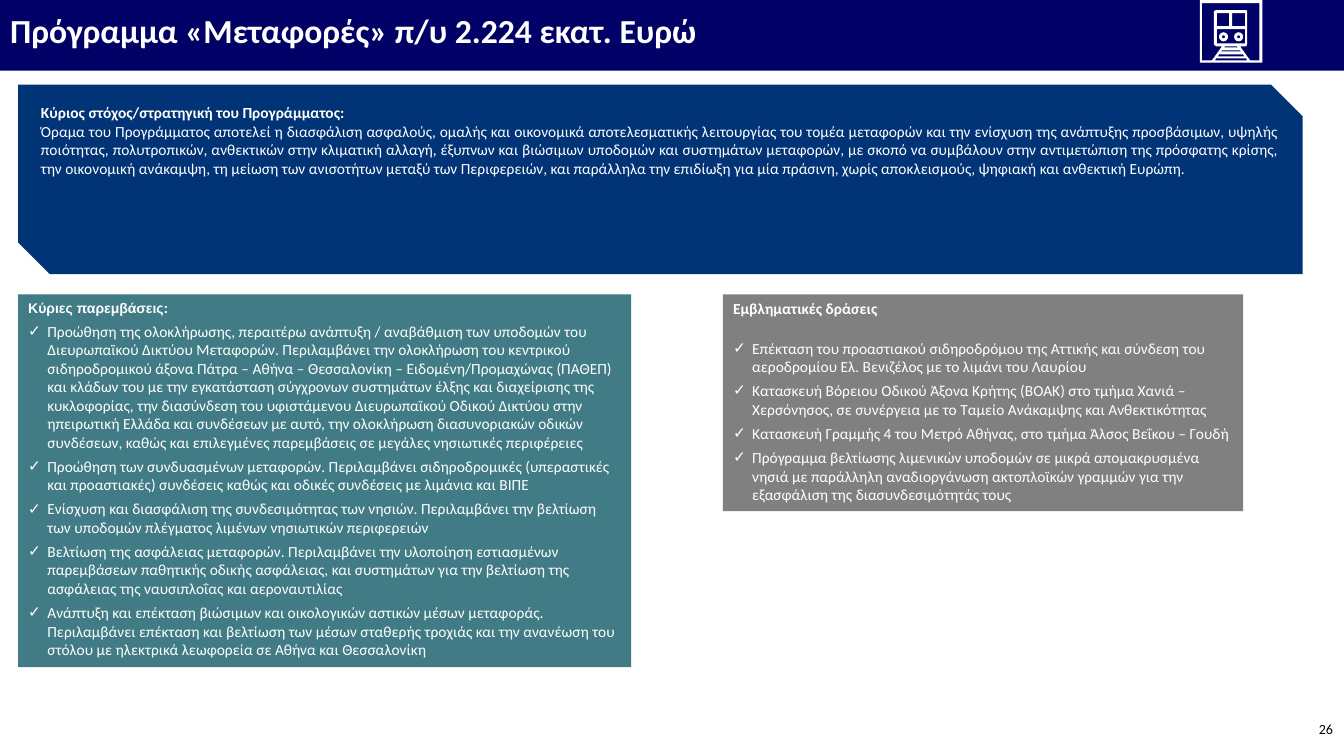
from pptx import Presentation as Deck
from pptx.dml.color import RGBColor as Rgb
from pptx.enum.shapes import MSO_SHAPE as Kind
from pptx.enum.text import MSO_ANCHOR as Anchor, MSO_AUTO_SIZE as Fit, PP_ALIGN as Align
from pptx.oxml import parse_xml
from pptx.oxml.ns import nsdecls
from pptx.util import Inches, Pt

WIDE, HIGH = Inches(13.33), Inches(7.5)
WHITE, BLACK = "FFFFFF", "000000"
BASE = {"name": "Calibri", "size": Pt(11), "bold": False}
BOLD = {"bold": True}
SMALL = {"name": "Arial", "size": Pt(10), "bold": True}
NONE = {"space_before": Pt(0), "space_after": Pt(0), "line_spacing": 1.0, "alignment": Align.LEFT}
TIGHT = {"space_before": Pt(2), "space_after": Pt(2)}
EDGE = {"margin_left": Inches(0.1), "margin_right": Inches(0.1),
        "margin_top": Inches(0.05), "margin_bottom": Inches(0.05)}
EVEN = {"margin_top": Inches(0.1), "margin_bottom": Inches(0.1)}
THIN = {"margin_left": Inches(0.07), "margin_right": Inches(0.07),
        "margin_top": Inches(0.03), "margin_bottom": Inches(0.03)}

TITLE = "Πρόγραμμα «Μεταφορές» π/υ 2.224 εκατ. Ευρώ"
GOAL = "Κύριος στόχος/στρατηγική του Προγράμματος:"
VISION = (
    "Όραμα του Προγράμματος αποτελεί η διασφάλιση ασφαλούς, ομαλής και οικονομικά αποτελεσματικής "
    "λειτουργίας του τομέα μεταφορών και την ενίσχυση της ανάπτυξης προσβάσιμων, υψηλής ποιότητας, "
    "πολυτροπικών, ανθεκτικών στην κλιματική αλλαγή, έξυπνων και βιώσιμων υποδομών και συστημάτων "
    "μεταφορών, με σκοπό να συμβάλουν στην αντιμετώπιση της πρόσφατης κρίσης, την οικονομική ανάκαμψη, "
    "τη μείωση των ανισοτήτων μεταξύ των Περιφερειών, και παράλληλα την επιδίωξη για μία πράσινη, "
    "χωρίς αποκλεισμούς, ψηφιακή και ανθεκτική Ευρώπη.")
WORKS = [
    "Προώθηση της ολοκλήρωσης, περαιτέρω ανάπτυξη / αναβάθμιση των υποδομών του Διευρωπαϊκού Δικτύου "
    "Μεταφορών. Περιλαμβάνει την ολοκλήρωση του κεντρικού σιδηροδρομικού άξονα Πάτρα – Αθήνα – "
    "Θεσσαλονίκη – Ειδομένη/Προμαχώνας (ΠΑΘΕΠ) και κλάδων του με την εγκατάσταση σύγχρονων συστημάτων "
    "έλξης και διαχείρισης της κυκλοφορίας, την διασύνδεση του υφιστάμενου Διευρωπαϊκού Οδικού Δικτύου "
    "στην ηπειρωτική Ελλάδα και συνδέσεων με αυτό, την ολοκλήρωση διασυνοριακών οδικών συνδέσεων, "
    "καθώς και επιλεγμένες παρεμβάσεις σε μεγάλες νησιωτικές περιφέρειες",
    "Προώθηση των συνδυασμένων μεταφορών. Περιλαμβάνει σιδηροδρομικές (υπεραστικές και προαστιακές) "
    "συνδέσεις καθώς και οδικές συνδέσεις με λιμάνια και ΒΙΠΕ",
    "Ενίσχυση και διασφάλιση της συνδεσιμότητας των νησιών. Περιλαμβάνει την βελτίωση των υποδομών "
    "πλέγματος λιμένων νησιωτικών περιφερειών",
    "Βελτίωση της ασφάλειας μεταφορών. Περιλαμβάνει την υλοποίηση εστιασμένων παρεμβάσεων παθητικής "
    "οδικής ασφάλειας, και συστημάτων για την βελτίωση της ασφάλειας της ναυσιπλοΐας και αεροναυτιλίας",
    "Ανάπτυξη και επέκταση βιώσιμων και οικολογικών αστικών μέσων μεταφοράς. Περιλαμβάνει επέκταση και "
    "βελτίωση των μέσων σταθερής τροχιάς και την ανανέωση του στόλου με ηλεκτρικά λεωφορεία σε Αθήνα "
    "και Θεσσαλονίκη"]
FLAGS = [
    "Επέκταση του προαστιακού σιδηροδρόμου της Αττικής και σύνδεση του αεροδρομίου Ελ. Βενιζέλος με το "
    "λιμάνι του Λαυρίου",
    "Κατασκευή Βόρειου Οδικού Άξονα Κρήτης (ΒΟΑΚ) στο τμήμα Χανιά – Χερσόνησος, σε συνέργεια με το "
    "Ταμείο Ανάκαμψης και Ανθεκτικότητας",
    "Κατασκευή Γραμμής 4 του Μετρό Αθήνας, στο τμήμα Άλσος Βεΐκου – Γουδή",
    "Πρόγραμμα βελτίωσης λιμενικών υποδομών σε μικρά απομακρυσμένα νησιά με παράλληλη αναδιοργάνωση "
    "ακτοπλοϊκών γραμμών για την εξασφάλιση της διασυνδεσιμότητάς τους"]


def pane(left, top, right, low):
    """Give the corners of an upright window."""
    return [(left, top), (right, top), (right, low), (left, low)]


TRAIN = [
    pane(0, 0, 62, 62), pane(17, 29, 45, 43), pane(17, 13, 29, 26), pane(32, 13, 45, 26),
    *[[(a, top), (62 - a, top), (62 - b, low), (b, low)]
      for a, top, b, low in [(25, 46, 24, 47), (22, 50, 21, 51), (19, 54, 18, 56), (16, 58, 15, 60)]],
    [(59, 60), (50, 60), (40, 46), (46, 46), (47, 44), (47, 11), (46, 10), (16, 10), (14, 11),
     (14, 44), (16, 46), (22, 46), (12, 60), (2, 60), (2, 3), (59, 3)]]
LAMPS = [19, 34]


def tint(code):
    """Turn a hex string into a colour."""
    return Rgb.from_string(code)


def apply(item, *looks):
    """Set attributes from format dicts."""
    for look in looks:
        for key, value in look.items():
            setattr(item, key, value)


class Page:
    """Hold the slide and its style, with lengths in percent of its size."""

    def __init__(self, deck):
        """Add a slide with a title and two lists."""
        self.slide = deck.slides.add_slide(deck.slide_layouts[3])
        self.holds = self.slide.placeholders

    def place(self, shape, area):
        """Move a shape to left, top, width and height."""
        sizes = [round(part * full / 100) for part, full in zip(area, (WIDE, HIGH, WIDE, HIGH))]
        apply(shape, dict(zip(("left", "top", "width", "height"), sizes)))

    def paint(self, shape, code):
        """Fill a shape flat, with no line or shadow."""
        shape.fill.solid()
        shape.fill.fore_color.rgb = tint(code)
        shape.line.fill.background()
        shape.shadow.inherit = False

    def frame(self, shape, anchor, look):
        """Set the margins and anchor of a text frame."""
        apply(shape.text_frame, EDGE, look,
              {"word_wrap": True, "auto_size": Fit.NONE, "vertical_anchor": anchor})

    def say(self, shape, text, look, form, code=WHITE, tick=False):
        """Add one paragraph, with a tick if asked."""
        frame = shape.text_frame
        para = frame.add_paragraph() if frame.text else frame.paragraphs[0]
        props = para._p.get_or_add_pPr()
        step = Inches(0.19) if tick else 0
        props.set("marL", str(step))
        props.set("indent", str(-step))
        marks = ([f'<a:buClr {nsdecls("a")}><a:srgbClr val="{WHITE}"/></a:buClr>',
                  f'<a:buFont {nsdecls("a")} typeface="Arial"/>',
                  f'<a:buChar {nsdecls("a")} char="✓"/>'] if tick
                 else [f'<a:buNone {nsdecls("a")}/>'])
        for mark in marks:
            props.append(parse_xml(mark))
        apply(para, NONE, form)
        run = para.add_run()
        run.text = text
        apply(run.font, BASE, look)
        run.font.color.rgb = tint(code)

    def title(self, text, area, code):
        """Fill the title bar."""
        bar = self.slide.shapes.title
        self.place(bar, area)
        self.paint(bar, code)
        self.frame(bar, Anchor.MIDDLE, EVEN)
        self.say(bar, text, {"size": Pt(24), "bold": True}, {"line_spacing": 0.9})

    def banner(self, head, text, area, code):
        """Draw the snipped box with a heading and text."""
        box = self.slide.shapes.add_shape(Kind.SNIP_2_DIAG_RECTANGLE, 0, 0, 1, 1)
        self.place(box, area)
        self.paint(box, code)
        self.frame(box, Anchor.TOP, THIN)
        self.say(box, head, BOLD, {})
        self.say(box, text, {}, {"alignment": Align.JUSTIFY})

    def ticks(self, slot, head, look, gap, items, area, code):
        """Fill a list with a heading and ticked items."""
        box = self.holds[slot]
        self.place(box, area)
        self.paint(box, code)
        self.frame(box, Anchor.TOP, {})
        self.say(box, head, look, {})
        for rank, item in enumerate(items):
            form = TIGHT if rank else {**TIGHT, "space_before": Pt(gap)}
            self.say(box, item, {}, form, tick=True)

    def number(self, text, area):
        """Set the page number."""
        box = self.slide.shapes.add_textbox(0, 0, 1, 1)
        self.place(box, area)
        self.frame(box, Anchor.MIDDLE, EVEN)
        self.say(box, text, {"size": Pt(10)}, {"alignment": Align.RIGHT}, BLACK)

    def train(self, left, unit=Inches(0.01)):
        """Draw the train sign from its outlines and lamps."""
        start = round(left * WIDE / 100)
        group = self.slide.shapes.add_group_shape().shapes
        pen = group.build_freeform(*TRAIN[0][0], scale=unit)
        for rank, line in enumerate(TRAIN):
            if rank:
                pen.move_to(*line[0])
            pen.add_line_segments(line[1:], close=True)
        self.paint(pen.convert_to_shape(start, 0), WHITE)
        for lamp in LAMPS:
            ring = group.add_shape(Kind.DONUT, start + lamp * unit, 32 * unit, 9 * unit, 9 * unit)
            ring.adjustments[0] = 0.33
            self.paint(ring, WHITE)


def main():
    """Build and save the slide."""
    deck = Deck()
    apply(deck, {"slide_width": WIDE, "slide_height": HIGH})
    page = Page(deck)
    page.title(TITLE, (0, -0.8, 100, 10.13), "000066")
    page.banner(GOAL, VISION, (1.35, 11.2, 95.57, 25.07), "013476")
    page.ticks(1, "Κύριες παρεμβάσεις:", SMALL, 4, WORKS, (1.35, 38.93, 45.61, 49.33), "417B85")
    page.ticks(2, "Εμβληματικές δράσεις", BOLD, 15, FLAGS, (53.79, 38.93, 38.71, 28.67), "808080")
    page.number("26", (93.92, 92.93, 6, 7.07))
    page.train(89.27)
    deck.save("out.pptx")


if __name__ == "__main__":
    main()
